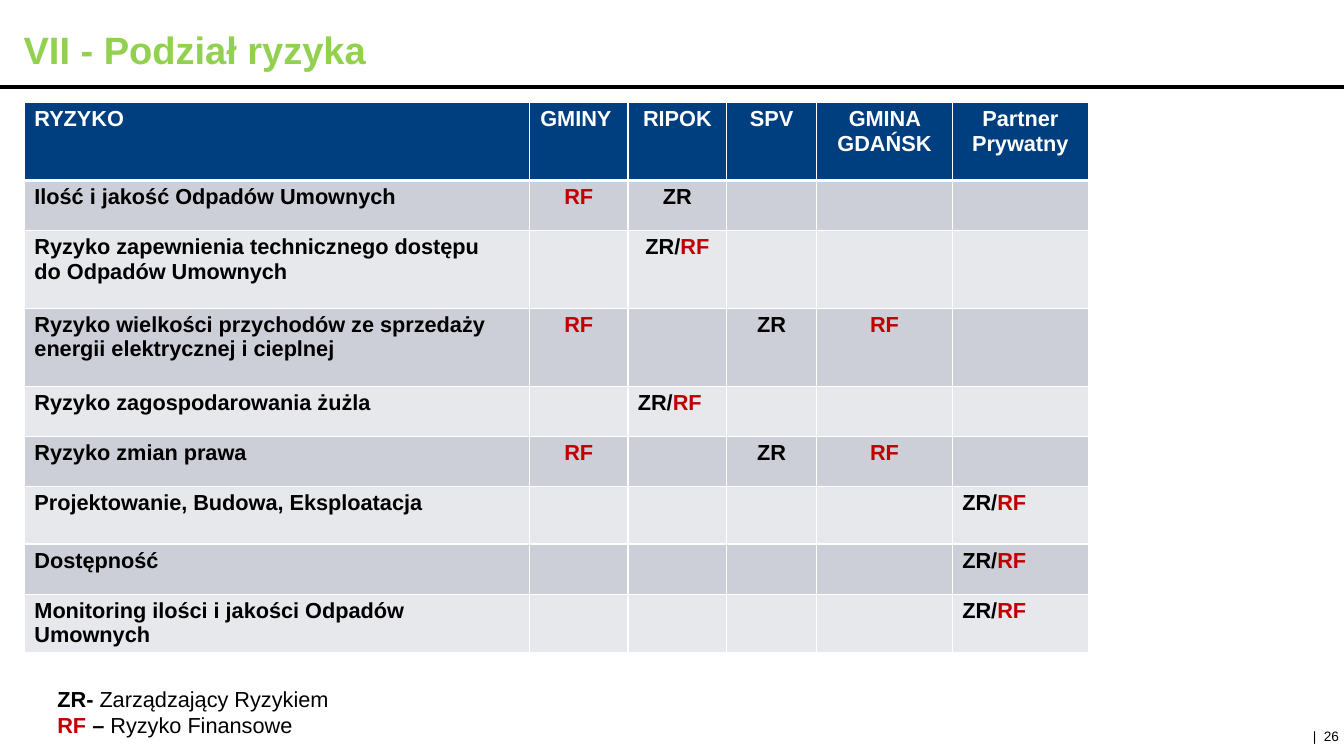
import pptx
import pptx.util
import pptx.dml.color
import pptx.enum.shapes
import pptx.enum.text
import pptx.oxml
import pptx.oxml.ns

Cm, Pt = pptx.util.Cm, pptx.util.Pt
Align = pptx.enum.text.PP_ALIGN
Anchor = pptx.enum.text.MSO_ANCHOR

# Content
TITLE = "VII - Podział ryzyka"
PAGE = "|  26"
HEAD = ["RYZYKO", "GMINY ", "RIPOK", "SPV", "GMINA GDAŃSK", "Partner Prywatny"]
ZR, RF = ("ZR", "ink"), ("RF", "red")
BOTH = [("ZR/", "ink"), RF]
LOW, MID, TALL = 1.3, 1.5, 2.02
# Each risk: name, row height, marks by column, alignment of the marks
RISKS = [
    ("Ilość i jakość Odpadów Umownych", LOW, {1: [RF], 2: [ZR]}, Align.CENTER),
    ("Ryzyko zapewnienia technicznego dostępu \ndo Odpadów Umownych", TALL, {2: BOTH}, Align.CENTER),
    ("Ryzyko wielkości przychodów ze sprzedaży energii elektrycznej i cieplnej", TALL,
     {1: [RF], 3: [ZR], 4: [RF]}, Align.CENTER),
    ("Ryzyko zagospodarowania żużla", LOW, {2: BOTH}, Align.LEFT),
    ("Ryzyko zmian prawa", LOW, {1: [RF], 3: [ZR], 4: [RF]}, Align.CENTER),
    ("Projektowanie, Budowa, Eksploatacja", MID, {5: BOTH}, Align.LEFT),
    ("Dostępność", LOW, {5: BOTH}, Align.LEFT),
    ("Monitoring ilości i jakości Odpadów Umownych", MID, {5: BOTH}, Align.LEFT),
]
# Each legend line: text, colour, bold
LEGEND = [
    [("ZR- ", "ink", True), ("Zarządzający Ryzykiem", "ink", False)],
    [("RF", "red", True), (" – ", "ink", True), ("Ryzyko Finansowe", "ink", False)],
]
WIDTHS = [13.1, 2.56, 2.56, 2.33, 3.53, 3.52]
THEME = {
    "font": "Arial", "title": 28, "text": 16, "page": 10,
    "green": "92D050", "ink": "000000", "red": "C00000", "white": "FFFFFF",
    "navy": "003F7F", "bands": ["CCCFD8", "E7E8EC"],
}


def rgb(code):
    return pptx.dml.color.RGBColor.from_string(code)


def style(run, color, size="text", bold=True):
    font = run.font
    font.name, font.size, font.bold = THEME["font"], Pt(THEME[size]), bold
    font.color.rgb = rgb(THEME[color])


def label(para, text, color, size="text", bold=True, align=Align.LEFT):
    para.text = text
    para.alignment = align
    for run in para.runs:
        style(run, color, size, bold)


def join(para, parts):
    for text, color, *bold in parts:
        run = para.add_run()
        run.text = text
        style(run, color, "text", *bold)


def frame(cell, top, base):
    props = cell._tc.get_or_add_tcPr()
    for side, width in zip("LRTB", (1, 1, top, base)):
        props.append(pptx.oxml.parse_xml(
            f'<a:ln{side} {pptx.oxml.ns.nsdecls("a")} w="{Pt(width)}"><a:solidFill>'
            f'<a:srgbClr val="{THEME["white"]}"/></a:solidFill></a:ln{side}>'))


def paint(cell, color):
    cell.fill.solid()
    cell.fill.fore_color.rgb = rgb(color)


def box(slide, left, top, width, height):
    text = slide.shapes.add_textbox(Cm(left), Cm(top), Cm(width), Cm(height)).text_frame
    text.word_wrap = True
    return text


def main():
    deck = pptx.Presentation()
    deck.slide_width, deck.slide_height = Cm(34.88), Cm(19.62)
    slide = deck.slides.add_slide(deck.slide_layouts[5])

    # Title and rule
    title = slide.shapes.title
    title.left, title.top, title.width, title.height = Cm(0.36), Cm(0.48), Cm(23.32), Cm(1.6)
    title.text_frame.vertical_anchor = Anchor.MIDDLE
    label(title.text_frame.paragraphs[0], TITLE, "green", "title")
    rule = slide.shapes.add_connector(
        pptx.enum.shapes.MSO_CONNECTOR.STRAIGHT, 0, Cm(2.26), deck.slide_width, Cm(2.26))
    rule.line.color.rgb = rgb(THEME["ink"])
    rule.line.width = Pt(3)
    rule._element.spPr.append(pptx.oxml.parse_xml(f'<a:effectLst {pptx.oxml.ns.nsdecls("a")}/>'))

    # Risk table
    highs = [TALL] + [risk[1] for risk in RISKS]
    table = slide.shapes.add_table(
        len(highs), len(HEAD), Cm(0.64), Cm(2.66), Cm(sum(WIDTHS)), Cm(sum(highs))).table
    for col, width in zip(table.columns, WIDTHS):
        col.width = Cm(width)
    for row, high in zip(table.rows, highs):
        row.height = Cm(high)
    for c, name in enumerate(HEAD):
        cell = table.cell(0, c)
        frame(cell, 1, 3)
        paint(cell, THEME["navy"])
        label(cell.text_frame.paragraphs[0], name, "white", align=Align.CENTER if c else Align.LEFT)
    for r, (name, high, marks, align) in enumerate(RISKS, 1):
        for c in range(len(HEAD)):
            cell = table.cell(r, c)
            frame(cell, 3 if r == 1 else 1, 1)
            paint(cell, THEME["bands"][(r - 1) % 2])
            para = cell.text_frame.paragraphs[0]
            if c == 0:
                label(para, name, "ink")
            elif c in marks:
                para.alignment = align
                join(para, marks[c])

    # Legend
    text = box(slide, 1.24, 17.68, 10.39, 1.63)
    text.text = "\n" * (len(LEGEND) - 1)
    for para, parts in zip(text.paragraphs, LEGEND):
        join(para, parts)

    # Page number
    text = box(slide, 28.65, 18.6, 6.2, 1)
    text.vertical_anchor = Anchor.MIDDLE
    text.margin_right = Cm(0.1)
    label(text.paragraphs[0], PAGE, "ink", "page", False, Align.RIGHT)

    deck.save("out.pptx")


if __name__ == "__main__":
    main()
